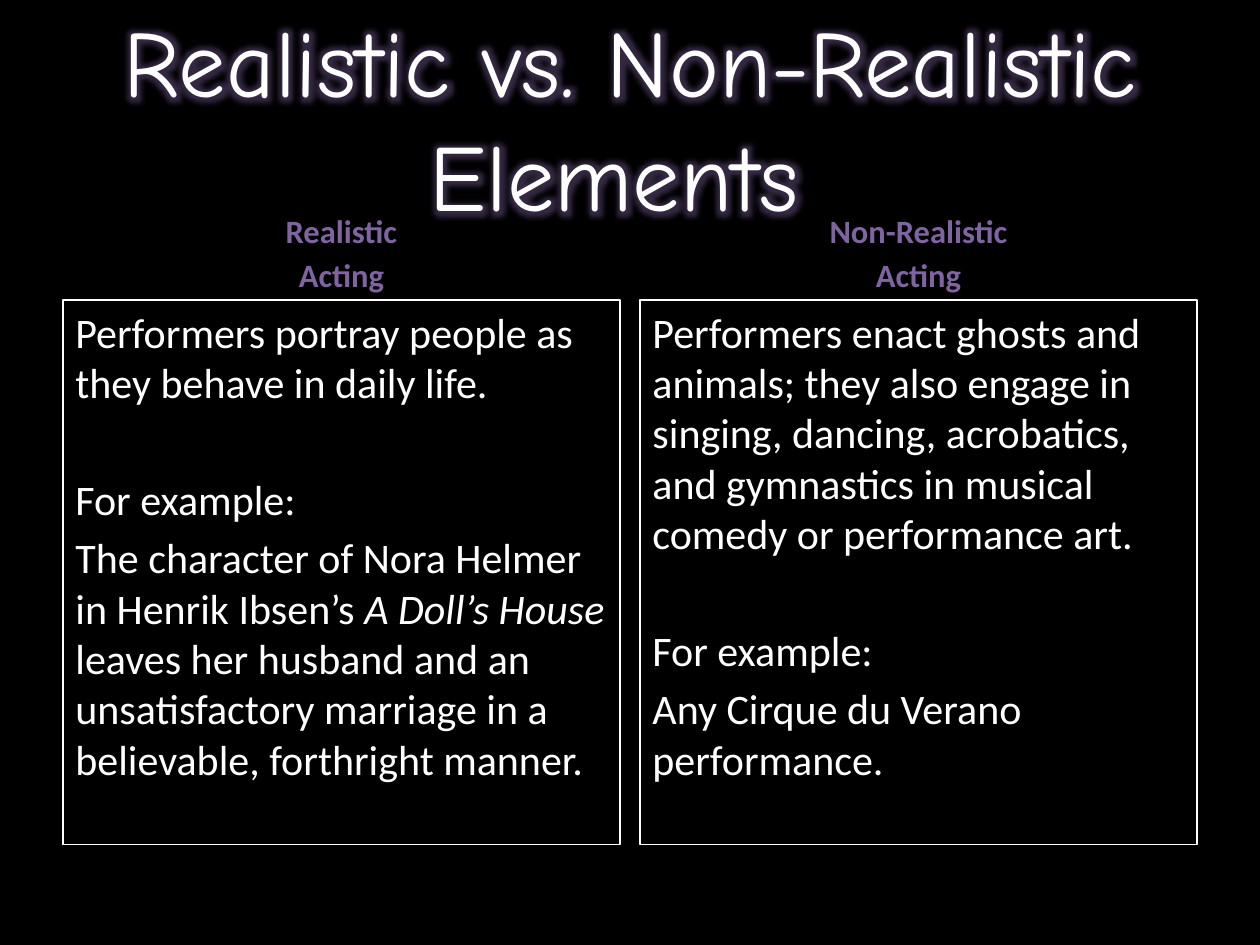
from lxml import etree
from pptx import Presentation
from pptx import util as u
from pptx.dml.color import RGBColor
from pptx.enum import shapes, text
from pptx.oxml.ns import qn

Pt = u.Pt
COLORS = {"black": "000000", "white": "FFFFFF", "purple": "8064A2", "glow": "7030A0"}
MARGIN, COL_W, COL_STEP = 36, 318.24, 329.76
HEAD_TOP, HEAD_H, BODY_TOP, BODY_H = 120.96, 50.4, 171.36, 311.04
LINE_GAP, BREAK_GAP = 4.5, 38


class Deck:
    def __init__(self, prs):
        self.s = prs.slides.add_slide(prs.slide_layouts[6])
        fill = self.s.background.fill
        fill.solid()
        fill.fore_color.rgb = self.color("black")

    def color(self, name):
        return RGBColor.from_string(COLORS[name])

    def frame(self, sp, anchor):
        tf = sp.text_frame
        tf.word_wrap = True
        tf.vertical_anchor = anchor
        return tf

    def paragraph(self, tf, runs, size, color, font="Calibri", before=0,
                  align=text.PP_ALIGN.LEFT, bold=False):
        """Add a paragraph of (string, italic) runs, reusing the empty first one."""
        p = tf.paragraphs[0] if not tf.paragraphs[0].runs else tf.add_paragraph()
        p.alignment = align
        p.space_before = Pt(before)
        for string, italic in runs:
            r = p.add_run()
            r.text = string
            f = r.font
            f.name, f.size, f.bold, f.italic = font, Pt(size), bold, italic
            f.color.rgb = self.color(color)
        return p

    def glow(self, r, radius, alpha):
        """Put a coloured glow around a run; it must follow the run's fill."""
        effects = etree.Element(qn("a:effectLst"))
        glow = etree.SubElement(effects, qn("a:glow"), rad=str(int(Pt(radius))))
        clr = etree.SubElement(glow, qn("a:srgbClr"), val=COLORS["purple"])
        etree.SubElement(clr, qn("a:alpha"), val=str(alpha * 1000))
        r.font.fill.solid()
        r.font.color.rgb = self.color("white")
        r._r.rPr.find(qn("a:solidFill")).addnext(effects)

    def title(self, string):
        sp = self.s.shapes.add_textbox(Pt(MARGIN), Pt(21.6), Pt(648), Pt(90))
        tf = self.frame(sp, text.MSO_ANCHOR.MIDDLE)
        p = self.paragraph(tf, [(string, False)], 54, "white", "Comic Neue",
                           align=text.PP_ALIGN.CENTER)
        self.glow(p.runs[0], 11, 40)

    def heading(self, x, lines):
        sp = self.s.shapes.add_textbox(Pt(x), Pt(HEAD_TOP), Pt(COL_W), Pt(HEAD_H))
        tf = self.frame(sp, text.MSO_ANCHOR.BOTTOM)
        for line in lines:
            self.paragraph(tf, [(line, False)], 18.6, "purple", before=2.8,
                           align=text.PP_ALIGN.CENTER, bold=True)

    def panel(self, x, statement, example):
        sp = self.s.shapes.add_shape(shapes.MSO_SHAPE.RECTANGLE, Pt(x), Pt(BODY_TOP),
                                     Pt(COL_W), Pt(BODY_H))
        sp.shadow.inherit = False
        sp.fill.background()
        sp.line.color.rgb = self.color("white")
        sp.line.width = Pt(0.75)
        tf = self.frame(sp, text.MSO_ANCHOR.TOP)
        self.paragraph(tf, [(statement, False)], 24, "white", before=LINE_GAP)
        self.paragraph(tf, [("For example:", False)], 24, "white", before=BREAK_GAP)
        self.paragraph(tf, example, 24, "white", before=LINE_GAP)


COLUMNS = [
    ("Realistic",
     "Performers portray people as they behave in daily life.",
     [("The character of Nora Helmer in Henrik Ibsen’s ", False),
      ("A Doll’s House ", True),
      ("leaves her husband and an unsatisfactory marriage in a believable, "
       "forthright manner.", False)]),
    ("Non-Realistic",
     "Performers enact ghosts and animals; they also engage in singing, dancing, "
     "acrobatics, and gymnastics in musical comedy or performance art.",
     [("Any Cirque du Verano performance.", False)]),
]


def main():
    prs = Presentation()
    prs.slide_width, prs.slide_height = Pt(720), Pt(540)
    deck = Deck(prs)
    for i, (name, statement, example) in enumerate(COLUMNS):
        x = MARGIN + i * COL_STEP
        deck.heading(x, [name, "Acting"])
        deck.panel(x, statement, example)
    deck.title("Realistic vs. Non-Realistic Elements ")
    prs.save("out.pptx")


if __name__ == "__main__":
    main()
